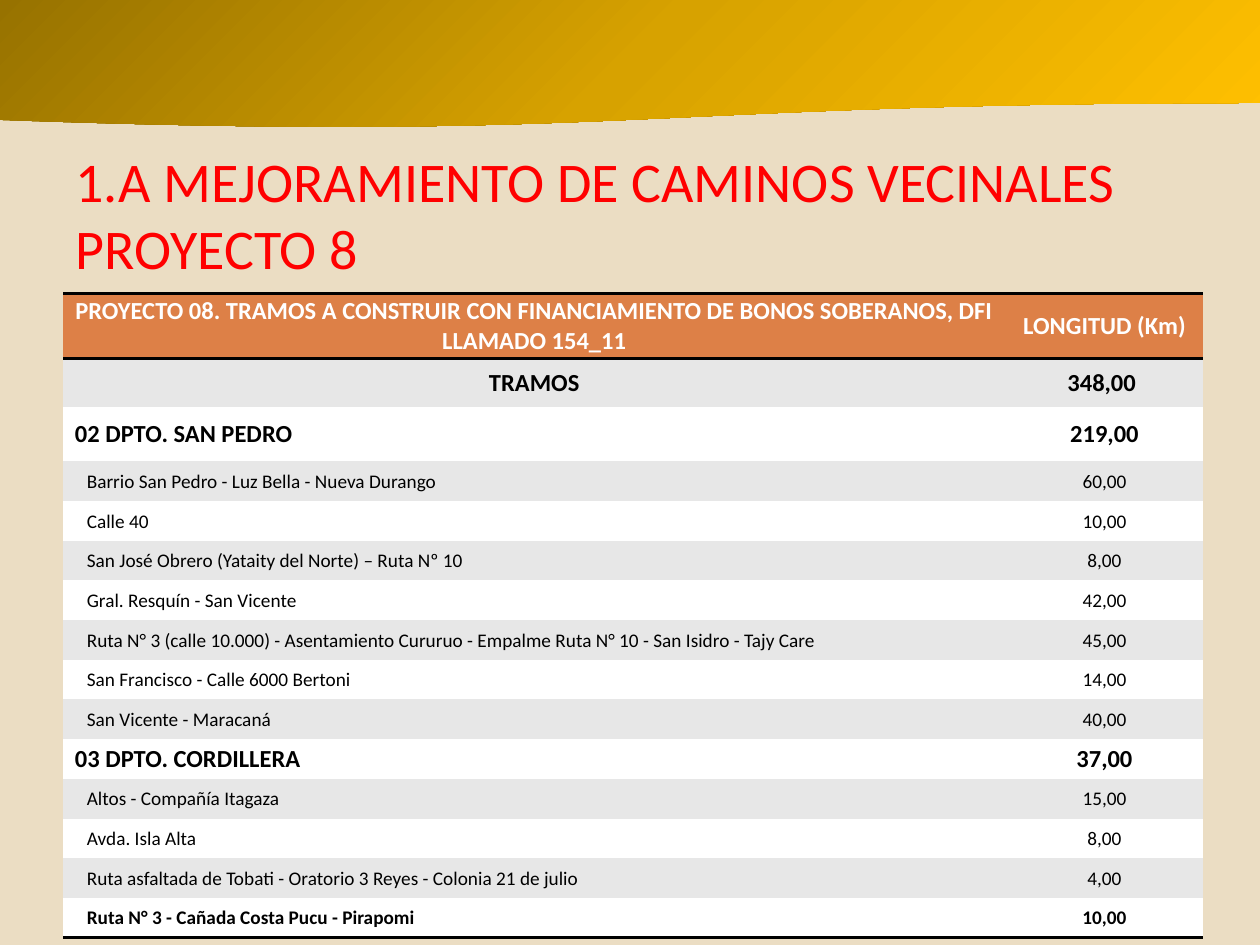
import copy

import pptx
import pptx.util
from lxml import etree
from pptx.dml.color import RGBColor
from pptx.enum.shapes import MSO_SHAPE
from pptx.enum.text import MSO_ANCHOR, MSO_AUTO_SIZE, PP_ALIGN
from pptx.oxml.ns import qn
from pptx.util import Cm

# Content: (kind, stretch, length)
TITLE = "1.A MEJORAMIENTO DE CAMINOS VECINALES \vPROYECTO 8"
ROWS = [
    ("header", "PROYECTO 08. TRAMOS A CONSTRUIR CON FINANCIAMIENTO DE BONOS "
               "SOBERANOS, DFI LLAMADO 154_11", "LONGITUD (Km)"),
    ("total", "TRAMOS", "348,00 "),
    ("department", "02 DPTO. SAN PEDRO", "219,00"),
    ("road", "Barrio San Pedro - Luz Bella - Nueva Durango", "60,00"),
    ("road", "Calle 40", "10,00"),
    ("road", "San José Obrero (Yataity del Norte) – Ruta Nº 10", "8,00"),
    ("road", "Gral. Resquín - San Vicente", "42,00"),
    ("road", "Ruta N° 3 (calle 10.000) - Asentamiento Cururuo - "
             "Empalme Ruta N° 10 - San Isidro - Tajy Care", "45,00"),
    ("road", "San Francisco - Calle 6000 Bertoni", "14,00"),
    ("road", "San Vicente - Maracaná", "40,00"),
    ("department", "03 DPTO. CORDILLERA", "37,00"),
    ("road", "Altos - Compañía Itagaza", "15,00"),
    ("road", "Avda. Isla Alta", "8,00"),
    ("road", "Ruta asfaltada de Tobati - Oratorio 3 Reyes - Colonia 21 de julio", "4,00"),
    ("last road", "Ruta N° 3 - Cañada Costa Pucu - Pirapomi", "10,00"),
]

THEME = {
    "font": "Calibri", "title_size": 32, "head_size": 14, "road_size": 11,
    "background": "EBDDC3", "title": "FF0000", "header": "DD8047",
    "header_text": "FFFFFF", "text": "000000", "bands": ("FFFFFF", "E7E7E7"),
    "rule": "000000", "wave": ((0, "977200"), (50, "D7A200"), (100, "FFC000")),
}

# Table measures in cm
COLUMNS = (19, 3.99)
ROW_HEIGHT = 0.8
TOP_HEIGHTS = (1.3, 0.98, 1.1)
INDENTS = {"department": 0.24, "road": 0.48, "last road": 0.48}


def rgb(value):
    return RGBColor.from_string(value)


def write(tf, text, size, color, bold=False, align=PP_ALIGN.LEFT):
    p = tf.paragraphs[0]
    p.text = text
    p.alignment = align
    for r in p.runs:
        r.font.name = THEME["font"]
        r.font.size = pptx.util.Pt(size)
        r.font.bold = bold
        r.font.color.rgb = rgb(color)
    # Line breaks take the size of the text around them
    for br in p._p.findall(qn("a:br")):
        br.append(copy.deepcopy(p.runs[0]._r.rPr))


def rule(cell, side):
    ln = etree.Element(qn("a:" + side), w=str(pptx.util.Pt(2)))
    fill = etree.SubElement(ln, qn("a:solidFill"))
    etree.SubElement(fill, qn("a:srgbClr"), val=THEME["rule"])
    cell._tc.get_or_add_tcPr().insert(0, ln)


def add_wave(s):
    sp = s.shapes.add_shape(MSO_SHAPE.FLOWCHART_DOCUMENT, 0, 0, Cm(25.4), Cm(2.59))
    sp.shadow.inherit = False
    sp.line.fill.background()
    sp.fill.gradient()
    sp.fill.gradient_angle = 315
    first = sp.fill.gradient_stops[0]._gs
    first.addnext(copy.deepcopy(first))
    for stop, (position, color) in zip(sp.fill.gradient_stops, THEME["wave"]):
        stop.position = position / 100
        stop.color.rgb = rgb(color)


def add_title(s):
    sp = s.shapes.title
    sp.left, sp.top, sp.width, sp.height = Cm(1.27), Cm(2.72), Cm(22.86), Cm(3.18)
    tf = sp.text_frame
    tf.word_wrap = True
    tf.auto_size = MSO_AUTO_SIZE.NONE
    tf.vertical_anchor = MSO_ANCHOR.MIDDLE
    write(tf, TITLE, THEME["title_size"], THEME["title"])


def add_lengths_table(s):
    heights = TOP_HEIGHTS + (ROW_HEIGHT,) * (len(ROWS) - len(TOP_HEIGHTS))
    frame = s.shapes.add_table(len(ROWS), 2, Cm(1.27), Cm(5.92),
                               Cm(sum(COLUMNS)), Cm(sum(heights)))
    table = frame.table
    # "No style, no grid" leaves only the fills and rules set here
    table._tbl.tblPr.find(qn("a:tableStyleId")).text = "{2D5ABB26-0587-4C30-8999-92F81FD0307C}"
    for column, width in zip(table.columns, COLUMNS):
        column.width = Cm(width)

    for i, (kind, *texts) in enumerate(ROWS):
        table.rows[i].height = Cm(heights[i])
        header = kind == "header"
        for j, text in enumerate(texts):
            cell = table.cell(i, j)
            indent = INDENTS.get(kind) if j == 0 else None
            cell.margin_left = Cm(indent or 0.02)
            cell.margin_right = cell.margin_top = Cm(0.02)
            cell.margin_bottom = 0
            cell.vertical_anchor = MSO_ANCHOR.MIDDLE
            cell.fill.solid()
            cell.fill.fore_color.rgb = rgb(THEME["header"] if header else THEME["bands"][i % 2])
            write(cell.text_frame, text,
                  THEME["road_size" if "road" in kind else "head_size"],
                  THEME["header_text" if header else "text"],
                  bold=kind != "road",
                  align=PP_ALIGN.LEFT if indent else PP_ALIGN.CENTER)
            if header or kind == "last road":
                rule(cell, "lnB")
            if header:
                rule(cell, "lnT")


def main():
    prs = pptx.Presentation()
    prs.slide_width, prs.slide_height = Cm(25.4), Cm(19.05)
    s = prs.slides.add_slide(prs.slide_layouts[5])
    s.background.fill.solid()
    s.background.fill.fore_color.rgb = rgb(THEME["background"])
    add_wave(s)
    add_title(s)
    add_lengths_table(s)
    prs.save("out.pptx")


if __name__ == "__main__":
    main()
